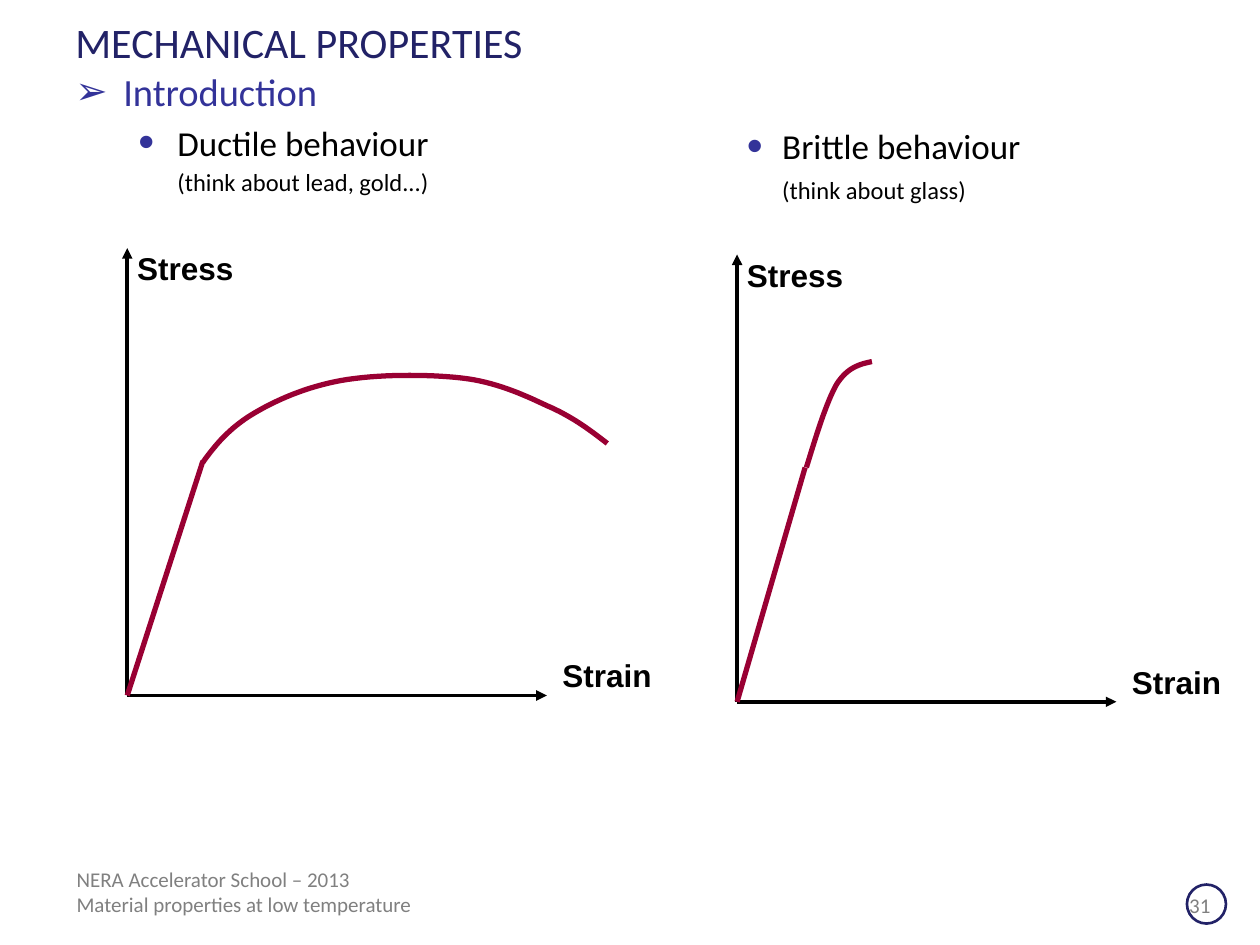
from lxml.etree import SubElement
from pptx import Presentation
from pptx.dml.color import RGBColor
from pptx.enum.shapes import MSO_CONNECTOR, MSO_SHAPE
from pptx.enum.text import MSO_ANCHOR
from pptx.oxml.ns import qn
from pptx.util import Inches, Pt

COLUMNS, ROWS = 100, 75
NAVY, BLUE, GRAY, BLACK, CRIMSON = "222267", "333399", "808080", "000000", "990033"

deck = Presentation()
deck.slide_width, deck.slide_height = Inches(10), Inches(7.5)
page = deck.slides.add_slide(deck.slide_layouts[6])


def column(count):
    return round(deck.slide_width * count / COLUMNS)


def row(count):
    return round(deck.slide_height * count / ROWS)


def place(box):
    left, top, width, height = box
    return column(left), row(top), column(width), row(height)


def color(value):
    return RGBColor.from_string(value)


def style_line(shape, value, weight):
    shape.line.color.rgb = color(value)
    shape.line.width = Pt(weight)


def add_bullet(para, symbol, scale):
    properties = para._p.get_or_add_pPr()
    bullet_color = SubElement(properties, qn("a:buClr"))
    SubElement(bullet_color, qn("a:srgbClr"), val=BLUE)
    SubElement(properties, qn("a:buSzPct"), val=str(scale * 1000))
    SubElement(properties, qn("a:buFont"), typeface="Arial")
    SubElement(properties, qn("a:buChar"), char=symbol)


def write(frame, text, size=12, font="Calibri", value=BLACK, bold=False,
          before=0, margin=0, indent=0, bullet=None, scale=100):
    para = frame.paragraphs[0]
    if para.runs:
        para = frame.add_paragraph()
    para.space_before = Pt(before)
    properties = para._p.get_or_add_pPr()
    properties.set("marL", str(column(margin)))
    properties.set("indent", str(column(indent)))
    if bullet:
        add_bullet(para, bullet, scale)
    span = para.add_run()
    span.text = text
    span.font.size, span.font.name, span.font.bold = Pt(size), font, bold
    span.font.color.rgb = color(value)


def add_frame(box, anchor=MSO_ANCHOR.TOP):
    frame = page.shapes.add_textbox(*place(box)).text_frame
    frame.word_wrap = True
    frame.vertical_anchor = anchor
    return frame


def add_line(start, end, value, weight, arrow=False):
    line = page.shapes.add_connector(
        MSO_CONNECTOR.STRAIGHT,
        column(start[0]), row(start[1]), column(end[0]), row(end[1]))
    style_line(line, value, weight)
    if arrow:
        SubElement(line.line._get_or_add_ln(), qn("a:tailEnd"), type="triangle")
    SubElement(line._element.spPr, qn("a:effectLst"))


def bezier(start, first, second, end, steps=16):
    for step in range(1, steps + 1):
        t = step / steps
        u = 1 - t
        yield tuple(u ** 3 * a + 3 * u * u * t * b + 3 * u * t * t * c + t ** 3 * d
                    for a, b, c, d in zip(start, first, second, end))


def add_curve(origin, knots):
    points = [knots[0]]
    for index in range(0, len(knots) - 1, 3):
        points.extend(bezier(*knots[index:index + 4]))
    placed = [(column(origin[0] + x), row(origin[1] - y)) for x, y in points]
    builder = page.shapes.build_freeform(*placed[0], scale=1.0)
    builder.add_line_segments(placed[1:], close=False)
    curve = builder.convert_to_shape()
    curve.shadow.inherit = False
    curve.fill.background()
    style_line(curve, CRIMSON, 3)


def add_plot(box, elastic_limit, knots):
    left, top, width, height = box
    right, bottom = left + width, top + height
    origin = left, bottom
    add_line(origin, (left, top), BLACK, 2, arrow=True)
    add_line(origin, (right, bottom), BLACK, 2, arrow=True)
    add_line(origin, (left + elastic_limit[0], bottom - elastic_limit[1]), CRIMSON, 3)
    add_curve(origin, knots)
    labels = [("Stress", (left - 0.2, top - 0.4, 13.2, 4)),
              ("Strain", (right + 0.25, bottom - 3.6, 11.2, 5))]
    for text, label_box in labels:
        write(add_frame(label_box), text, size=18, font="Arial", bold=True)


def add_behaviour(frame, heading, example, margin, indent, before, gap):
    write(frame, heading, size=20, before=before, margin=margin, indent=indent,
          bullet="•", scale=130)
    write(frame, example, size=14, before=gap, margin=margin)


def add_header(box):
    left, top, width, height = box
    write(add_frame(box, MSO_ANCHOR.MIDDLE), "MECHANICAL PROPERTIES", size=24, value=NAVY)
    frame = add_frame((left, top + 4.3, 52.9, 11.1))
    write(frame, "Introduction", size=22, value=BLUE, margin=3.8, indent=-3.8, bullet="➢")
    add_behaviour(frame, "Ductile behaviour", "(think about lead, gold...)",
                  margin=8.1, indent=-3.1, before=4, gap=2)


def add_footer(box):
    left, top, width, height = box
    badge = page.shapes.add_shape(
        MSO_SHAPE.OVAL, *place((left + 89.1, top + 1.9, 3.1, 3.1)))
    badge.shadow.inherit = False
    badge.fill.background()
    style_line(badge, NAVY, 1.5)
    frame = add_frame(box)
    for text in ("NERA Accelerator School – 2013", "Material properties at low temperature"):
        write(frame, text, value=GRAY)
    write(add_frame((left + 88.3, top + 2.03, 5, 3)), "31", value=GRAY)


add_footer((5.1, 68.3, 80, 5.2))
add_header((5, 0.6, 89.7, 5.4))
add_behaviour(add_frame((54.3, 9.4, 28.9, 7.9)), "Brittle behaviour", "(think about glass)",
              margin=6.8, indent=-2.8, before=0, gap=5)
add_plot((10.1, 19.7, 33.3, 35.5), (6, 18.6),
         [(6, 18.5), (7, 19.9), (8.1, 21.2), (9.9, 22.3), (11.7, 23.4), (14.2, 24.5),
          (17, 25), (19.8, 25.5), (23.8, 25.5), (26.5, 25.2), (29.2, 24.9), (31.4, 23.9),
          (33.3, 23), (35.2, 22.2), (36.7, 21.1), (38.1, 20)])
add_plot((58.5, 20.2, 30.1, 35.5), (5.4, 18.6),
         [(5.5, 18.6), (6.3, 21.2), (7.1, 23.8), (7.9, 25.2), (8.8, 26.6), (9.8, 26.8),
          (10.7, 27)])

deck.save("out.pptx")
